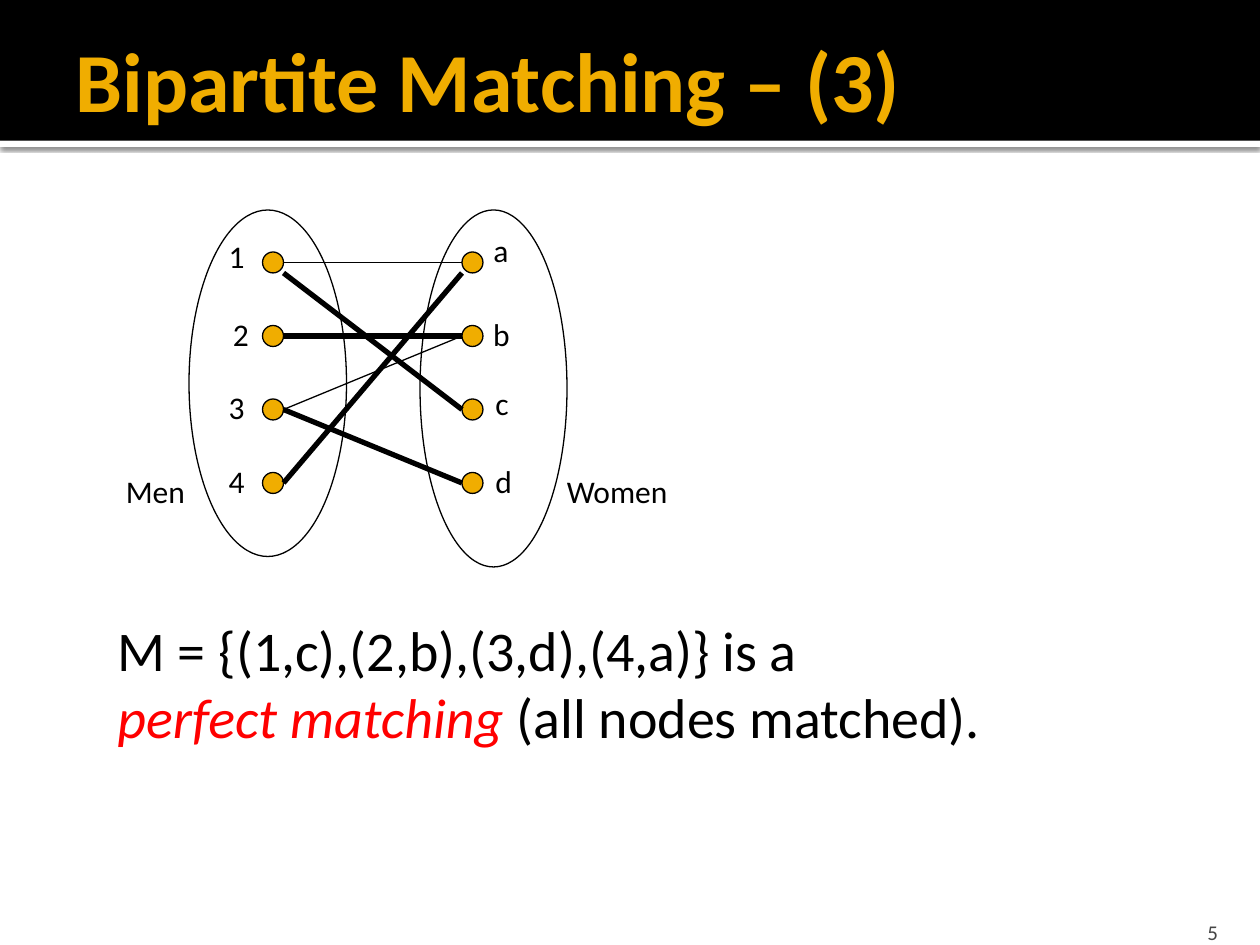
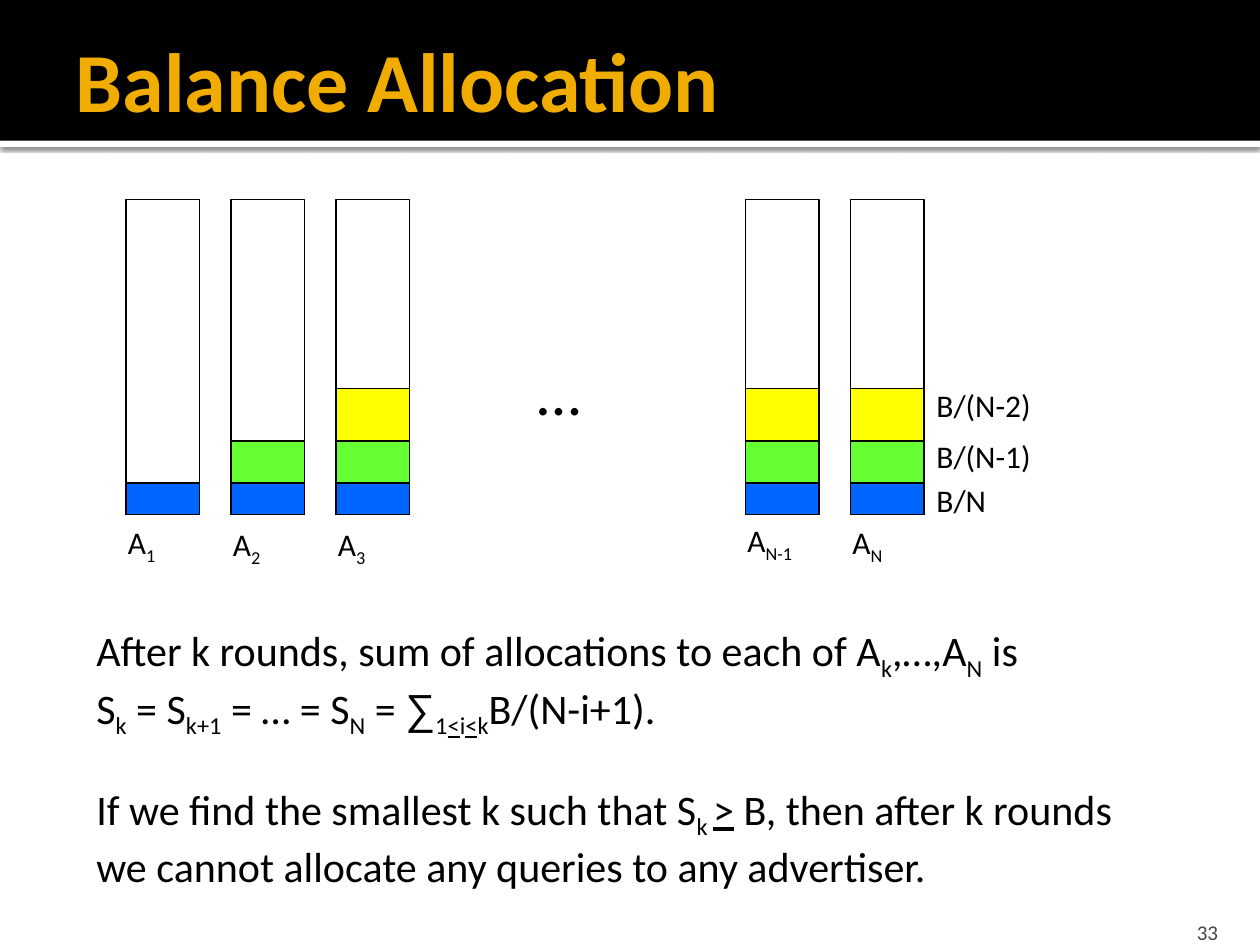
from dataclasses import dataclass
from typing import NamedTuple

from lxml import etree
from pptx import Presentation
from pptx import util as u
from pptx.dml.color import RGBColor
from pptx.enum import shapes, text
from pptx.oxml import ns

FONT = "Calibri"
BLACK, WHITE, GOLD, RED, GREY = "000000", "FFFFFF", "F0AD00", "FF0000", "454545"
BLUE, GREEN, YELLOW = "0066FF", "66FF33", "FFFF00"

# The slide is a grid of 120 columns by 90 rows, one twelfth of an inch each.
COLUMNS, ROWS = 120, 90
THIN = 0.75
LABEL_HEIGHT = 4.8


class Box(NamedTuple):
    """Left, top, width and height in grid units."""
    left: float
    top: float
    width: float
    height: float


@dataclass(frozen=True)
class Run:
    words: str
    color: str = BLACK
    font: str = FONT
    sub: bool = False
    italic: bool = False
    underline: bool = False
    bold: bool = False


@dataclass(frozen=True)
class Label:
    box: Box
    runs: tuple[Run, ...]


@dataclass(frozen=True)
class Edge:
    """A line from a man's row to a woman's row, each end lowered by its drop."""
    man: int
    woman: int
    weight: float = THIN
    man_drop: int = 0
    woman_drop: int = 0


@dataclass(frozen=True)
class Layer:
    color: str
    height: int
    first_bidder: int
    caption: str
    caption_top: float
    caption_width: float


def sub(words: str, underline: bool = False) -> Run:
    return Run(words, sub=True, underline=underline)


def label(words: str, left: float, top: float, width: float) -> Label:
    return Label(Box(left, top, width, LABEL_HEIGHT), (Run(words),))


def grid(cells: float) -> u.Length:
    return u.Inches(cells / 12)


def rgb(color: str) -> RGBColor:
    return RGBColor.from_string(color)


def add_figure(parent, kind, box: Box, fill: str | None = None, line: str | None = BLACK):
    figure = parent.add_shape(kind, *map(grid, box))
    figure.shadow.inherit = False
    if fill:
        figure.fill.solid()
        figure.fill.fore_color.rgb = rgb(fill)
    else:
        figure.fill.background()
    if line:
        figure.line.color.rgb = rgb(line)
        figure.line.width = u.Pt(THIN)
    else:
        figure.line.fill.background()
    return figure


def add_line(parent, start: tuple[float, float], end: tuple[float, float], weight: float) -> None:
    line = parent.add_connector(shapes.MSO_CONNECTOR.STRAIGHT, *map(grid, start + end))
    line.line.color.rgb = rgb(BLACK)
    line.line.width = u.Pt(weight)
    etree.SubElement(line.element.spPr, ns.qn("a:effectLst"))


def write(paragraph, runs: tuple[Run, ...], size: float) -> None:
    for part in runs:
        run = paragraph.add_run()
        run.text = part.words
        font = run.font
        font.name, font.size, font.color.rgb = part.font, u.Pt(size), rgb(part.color)
        font.bold, font.italic, font.underline = part.bold, part.italic, part.underline
        if part.sub:
            run._r.get_or_add_rPr().set("baseline", "-25000")


def add_text(parent, box: Box, *lines: tuple[Run, ...], size: float = 18):
    frame = parent.add_textbox(*map(grid, box)).text_frame
    frame.word_wrap = False
    frame.auto_size = text.MSO_AUTO_SIZE.SHAPE_TO_FIT_TEXT
    for i, runs in enumerate(lines):
        write(frame.add_paragraph() if i else frame.paragraphs[0], runs, size)
    return frame


def add_label(parent, item: Label) -> None:
    add_text(parent, item.box, item.runs)


def add_bands(slide) -> None:
    """Put the header band and its shadowed edge on the slide's layout."""
    rect = shapes.MSO_SHAPE.RECTANGLE
    edge = add_figure(slide.shapes, rect, Box(0, 13.4, COLUMNS, 0.6), WHITE, None)
    header = add_figure(slide.shapes, rect, Box(0, 0, COLUMNS, 13.4), BLACK, None)
    effects = edge.element.spPr.find(ns.qn("a:effectLst"))
    shadow = etree.SubElement(effects, ns.qn("a:outerShdw"), blurRad=str(u.Pt(2.5)),
                              dist=str(u.Pt(0.8)), dir="5400000", rotWithShape="0")
    tint = etree.SubElement(shadow, ns.qn("a:srgbClr"), val=BLACK)
    etree.SubElement(tint, ns.qn("a:alpha"), val="60000")
    for position, band in enumerate((edge, header), start=2):
        slide.slide_layout.shapes.element.insert(position, band.element)


def add_slide(deck, heading: str, number: str):
    slide = deck.slides.add_slide(deck.slide_layouts.get_by_name("Title Only"))
    title = slide.shapes.title
    title.left, title.top, title.width, title.height = map(grid, Box(6, 1, 114, 13))
    frame = title.text_frame
    frame.word_wrap = True
    frame.auto_size = text.MSO_AUTO_SIZE.NONE
    frame.vertical_anchor = text.MSO_ANCHOR.MIDDLE
    frame.margin_left, frame.margin_right = u.Inches(0.1), u.Inches(0.05)
    frame.paragraphs[0].alignment = text.PP_ALIGN.LEFT
    write(frame.paragraphs[0], (Run(heading, GOLD, bold=True),), 48)

    page = add_text(slide.shapes, Box(107.6, 86.4, 9.6, 3.6), (Run(number, GREY),), size=12)
    page.word_wrap = True
    page.auto_size = text.MSO_AUTO_SIZE.NONE
    page.vertical_anchor = text.MSO_ANCHOR.BOTTOM
    page.margin_bottom = 0
    page.paragraphs[0].alignment = text.PP_ALIGN.RIGHT
    return slide


MEN_X, WOMEN_X, RADIUS = 26, 45, 1
FIRST_ROW, ROW_STEP, PAIRS = 25, 7, 4
EDGES = (
    Edge(0, 0, 0.25),
    Edge(0, 2, 3, man_drop=1),
    Edge(1, 1, 3),
    Edge(2, 1),
    Edge(2, 3, 3),
    Edge(3, 0, 3, woman_drop=1),
)
GRAPH_LABELS = (
    label("1", 20.6, 22, 4.3), label("2", 21, 29.4, 4.3),
    label("3", 20.6, 36.4, 4.3), label("4", 20.6, 43.4, 4.3),
    label("a", 45.8, 21.4, 4.2), label("b", 45.8, 29.4, 4.3),
    label("c", 46, 36, 4), label("d", 46, 43.4, 4.3),
    label("Men", 10.8, 44.4, 8), label("Women", 52.8, 44.4, 12.2),
)
SETS = (Box(18, 20, 15, 33), Box(40, 20, 14, 34))


def draw_matching(slide) -> None:
    canvas, oval = slide.shapes, shapes.MSO_SHAPE.OVAL
    rows = [FIRST_ROW + ROW_STEP * i for i in range(PAIRS)]
    for x in (MEN_X, WOMEN_X):
        for y in rows:
            add_figure(canvas, oval, Box(x - RADIUS, y - RADIUS, 2 * RADIUS, 2 * RADIUS), GOLD)
    for edge in EDGES:
        add_line(canvas, (MEN_X + RADIUS, rows[edge.man] + edge.man_drop),
                 (WOMEN_X - RADIUS, rows[edge.woman] + edge.woman_drop), edge.weight)
    for item in GRAPH_LABELS:
        add_label(canvas, item)
    for outline in SETS:
        add_figure(canvas, oval, outline)
    add_text(canvas, Box(10, 58, 86.6, 14.2),
             (Run("M = {(1,c),(2,b),(3,d),(4,a)} is a"),),
             (Run("perfect matching ", RED, italic=True), Run("(all nodes matched).")),
             size=32)


BIDDERS_X = (12, 22, 32, 71, 81)
BAR_TOP, BAR_WIDTH, BAR_HEIGHT = 19, 7, 30
BAR_BOTTOM = BAR_TOP + BAR_HEIGHT
BIDDER_NAMES = (("1", 49.2, 5.8), ("2", 49.4, 5.8), ("3", 49.4, 5.8),
                ("N-1", 49, 8.2), ("N", 49.2, 6))
LAYERS = (
    Layer(BLUE, 3, 0, "B/N", 45.2, 8),
    Layer(GREEN, 4, 1, "B/(N-1)", 41, 14),
    Layer(YELLOW, 5, 2, "B/(N-2)", 36.2, 14),
)


def draw_allocation(slide) -> None:
    canvas, rect = slide.shapes, shapes.MSO_SHAPE.RECTANGLE
    for x in BIDDERS_X:
        add_figure(canvas, rect, Box(x, BAR_TOP, BAR_WIDTH, BAR_HEIGHT))
    add_text(canvas, Box(50, 33, 7.3, 8.4), (Run("…"),), size=36)
    for x, (index, top, width) in zip(BIDDERS_X, BIDDER_NAMES):
        add_label(canvas, Label(Box(x - 1, top, width, LABEL_HEIGHT), (Run("A"), sub(index))))

    level = BAR_BOTTOM
    for layer in LAYERS:
        level -= layer.height
        group = canvas.add_group_shape().shapes
        for x in BIDDERS_X[layer.first_bidder:]:
            add_figure(group, rect, Box(x, level, BAR_WIDTH, layer.height), layer.color)
        add_label(group, label(layer.caption, BIDDERS_X[-1] + BAR_WIDTH,
                               layer.caption_top, layer.caption_width))

    add_text(canvas, Box(8, 58.9, 96.8, 10.9),
             (Run("After k rounds, sum of allocations to each of A"), sub("k"),
              Run(",…,A"), sub("N"), Run(" is")),
             (Run("S"), sub("k"), Run(" = S"), sub("k+1"), Run(" = … = S"), sub("N"),
              Run(" = "), Run("∑", font="Arial"), sub("1"), sub("<", True), sub("i"),
              sub("<", True), sub("k"), Run("B/(N-i+1).")),
             size=24)
    add_text(canvas, Box(8, 74, 101.8, 10.9),
             (Run("If we find the smallest k such that S"), sub("k "),
              Run(">", underline=True), Run(" B, then after k rounds")),
             (Run("we cannot allocate any queries to any advertiser."),),
             size=24)


def main() -> None:
    deck = Presentation()
    deck.slide_width, deck.slide_height = grid(COLUMNS), grid(ROWS)
    matching = add_slide(deck, "Bipartite Matching – (3)", "5")
    add_bands(matching)
    draw_matching(matching)
    draw_allocation(add_slide(deck, "Balance Allocation", "33"))
    deck.save("out.pptx")


if __name__ == "__main__":
    main()
